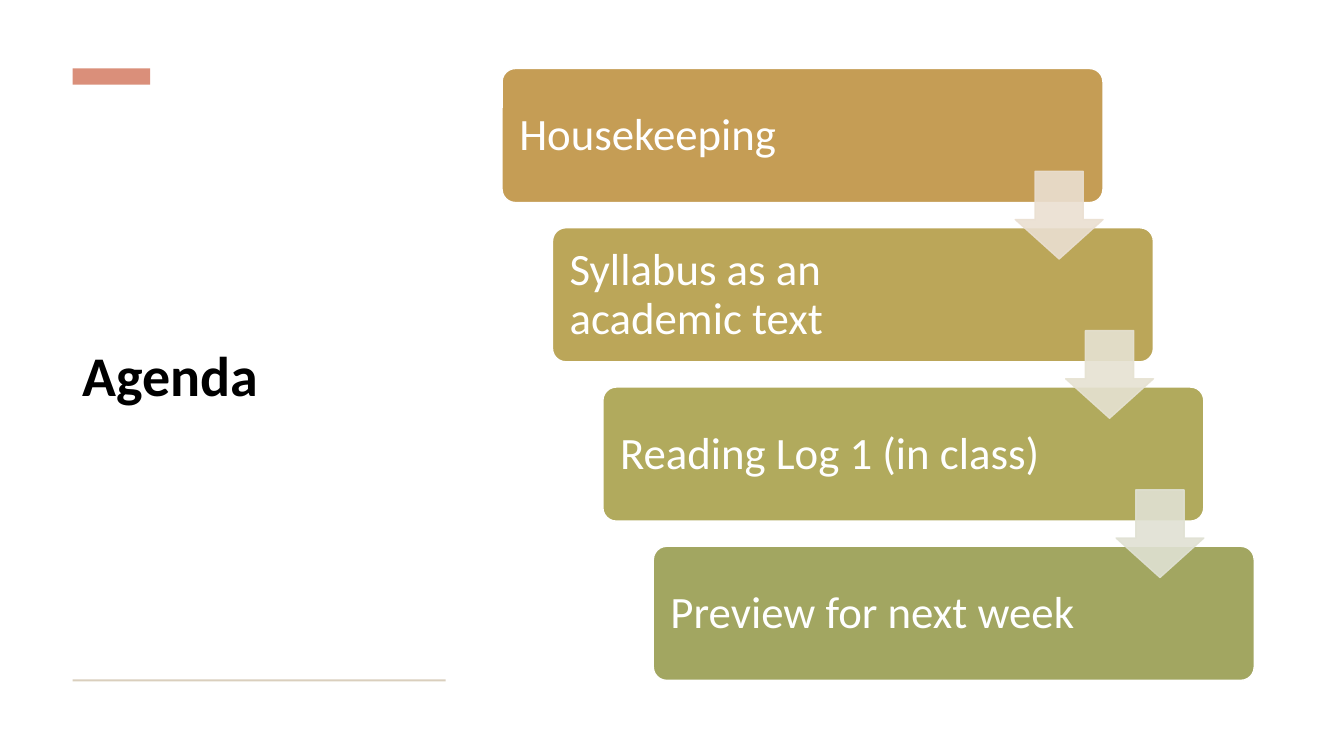
"""Agenda slide: a title beside four stepped cards joined by arrows."""
from pptx import Presentation, util as u
from pptx.dml.color import RGBColor
from pptx.enum import shapes, text
from pptx.oxml import ns
from lxml import etree

PX = 9144
WHITE = RGBColor(0xFF, 0xFF, 0xFF)
BLACK = RGBColor(0x00, 0x00, 0x00)
CORAL = RGBColor(0xDA, 0x8F, 0x7A)
SAND = RGBColor(0xDA, 0xCF, 0xBD)
CARDS = [
    ("Housekeeping", RGBColor(0xC5, 0x9D, 0x55)),
    ("Syllabus as an academic text", RGBColor(0xBB, 0xA6, 0x59)),
    ("Reading Log 1 (in class)", RGBColor(0xB1, 0xAA, 0x5D)),
    ("Preview for next week", RGBColor(0xA2, 0xA6, 0x61)),
]
ARROWS = [
    RGBColor(0xEA, 0xDF, 0xD1),
    RGBColor(0xE6, 0xE2, 0xD2),
    RGBColor(0xE0, 0xE1, 0xD3),
]

deck = Presentation()
deck.slide_width, deck.slide_height = 1333 * PX, 750 * PX
slide = deck.slides.add_slide(deck.slide_layouts[6])


def draw(kind, box, fill, line=None, adjust=()):
    shape = slide.shapes.add_shape(kind, *[n * PX for n in box])
    shape.shadow.inherit = False
    shape.fill.solid()
    shape.fill.fore_color.rgb = fill
    if line is None:
        shape.line.fill.background()
    else:
        shape.line.color.rgb = line
        shape.line.width = u.Pt(1)
    for i, value in enumerate(adjust):
        shape.adjustments[i] = value
    return shape


def write(words, box, size, color, bold=False, inset=10):
    frame = slide.shapes.add_textbox(*[n * PX for n in box]).text_frame
    frame.word_wrap = True
    frame.vertical_anchor = text.MSO_ANCHOR.MIDDLE
    frame.margin_left = frame.margin_right = inset * PX
    para = frame.paragraphs[0]
    para.line_spacing = 0.9
    run = para.add_run()
    run.text = words
    run.font.name = "Calibri"
    run.font.size = u.Pt(size)
    run.font.bold = bold
    run.font.color.rgb = color


kinds = shapes.MSO_SHAPE
write("Agenda", (72, 105, 370, 541), 40, BLACK, bold=True)
draw(kinds.RECTANGLE, (72, 68, 77, 16), CORAL)
draw(kinds.RECTANGLE, (72, 674, 370, 2), SAND)

left, top, wide, high = 498, 68, 596, 133
step, drop = 50, 158
for i, (words, fill) in enumerate(CARDS):
    x, y = left + i * step, top + i * drop
    draw(kinds.ROUNDED_RECTANGLE, (x, y, wide, high), fill, WHITE, [0.1])
    write(words, (x + 4, y + 4, 445, 126), 32, WHITE, inset=13)

for i, tint in enumerate(ARROWS):
    box = (1007 + i * step, 170 + i * drop, 87, 87)
    arrow = draw(kinds.DOWN_ARROW, box, tint, tint, [0.55, 0.45])
    for node in arrow.element.spPr.iter(ns.qn("a:srgbClr")):
        etree.SubElement(node, ns.qn("a:alpha"), val="90000")

deck.save("out.pptx")
